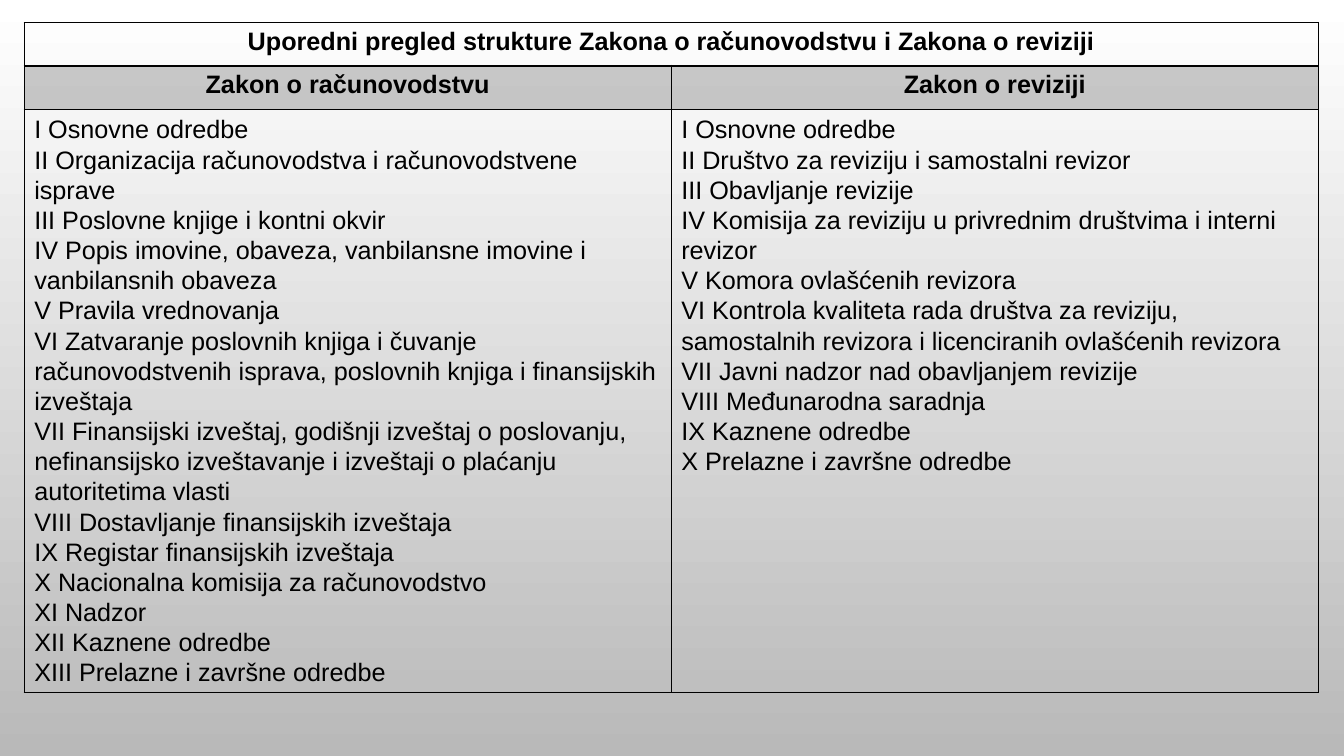
from lxml import etree
from pptx import Presentation
from pptx.dml.color import RGBColor
from pptx.enum.text import PP_ALIGN
from pptx.oxml.ns import qn
from pptx.util import Pt

CENTER, LEFT = PP_ALIGN.CENTER, PP_ALIGN.LEFT

THEME = {
    "font": "Arial",
    "size": Pt(18),
    "ink": RGBColor(0, 0, 0),
    "top": RGBColor(0xFF, 0xFF, 0xFF),
    "base": RGBColor(0xB9, 0xB9, 0xB9),
    "shade": 20,  # header opacity in percent
    "space": 1.07,
}

TITLE = "Uporedni pregled strukture Zakona o računovodstvu i Zakona o reviziji"
LAWS = {
    "Zakon o računovodstvu": [
        "I Osnovne odredbe",
        "II Organizacija računovodstva i računovodstvene isprave",
        "III Poslovne knjige i kontni okvir",
        "IV Popis imovine, obaveza, vanbilansne imovine i vanbilansnih obaveza",
        "V Pravila vrednovanja",
        "VI Zatvaranje poslovnih knjiga i čuvanje računovodstvenih isprava, "
        "poslovnih knjiga i finansijskih izveštaja",
        "VII Finansijski izveštaj, godišnji izveštaj o poslovanju, nefinansijsko "
        "izveštavanje i izveštaji o plaćanju autoritetima vlasti",
        "VIII Dostavljanje finansijskih izveštaja",
        "IX Registar finansijskih izveštaja",
        "X Nacionalna komisija za računovodstvo",
        "XI Nadzor",
        "XII Kaznene odredbe",
        "XIII Prelazne i završne odredbe",
    ],
    "Zakon o reviziji": [
        "I Osnovne odredbe",
        "II Društvo za reviziju i samostalni revizor",
        "III Obavljanje revizije",
        "IV Komisija za reviziju u privrednim društvima i interni revizor",
        "V Komora ovlašćenih revizora",
        "VI Kontrola kvaliteta rada društva za reviziju, samostalnih revizora "
        "i licenciranih ovlašćenih revizora",
        "VII Javni nadzor nad obavljanjem revizije",
        "VIII Međunarodna saradnja",
        "IX Kaznene odredbe",
        "X Prelazne i završne odredbe",
    ],
}


def write(cell, lines, head):
    """Fill a cell with one paragraph per line."""
    frame = cell.text_frame
    frame.text = "\n".join(lines)
    for para in frame.paragraphs:
        para.alignment = CENTER if head else LEFT
        if not head:
            para.line_spacing = THEME["space"]
        font = para.font
        font.name, font.size, font.bold = THEME["font"], THEME["size"], head
        font.color.rgb = THEME["ink"]


def frame_cell(cell, widths):
    """Draw cell borders; widths maps each side to points."""
    props = cell._tc.get_or_add_tcPr()
    for spot, (side, width) in enumerate(widths.items()):
        line = etree.Element(qn(f"a:ln{side}"), w=str(Pt(width)))
        fill = etree.SubElement(line, qn("a:solidFill"))
        etree.SubElement(fill, qn("a:srgbClr"), val=str(THEME["ink"]))
        props.insert(spot, line)


# Slide and background
deck = Presentation()
deck.slide_width, deck.slide_height = Pt(960), Pt(540)
slide = deck.slides.add_slide(deck.slide_layouts[6])
back = slide.background.fill
back.gradient()
back.gradient_angle = 270
for stop, tone in zip(back.gradient_stops, ("top", "base")):
    stop.color.rgb = THEME[tone]

# Table grid
rows = (31, 31, 415.5)
table = slide.shapes.add_table(
    3, 2, Pt(17.3), Pt(16), Pt(924.4), Pt(sum(rows))).table
table.first_row = table.horz_banding = False
for row, height in zip(table.rows, rows):
    row.height = Pt(height)
for col in table.columns:
    col.width = Pt(462.2)

# Title, headers and contents
table.cell(0, 0).merge(table.cell(0, 1))
write(table.cell(0, 0), [TITLE], True)
for num, (law, parts) in enumerate(LAWS.items()):
    write(table.cell(1, num), [law], True)
    write(table.cell(2, num), parts, False)

# Fills and borders
for num, row in enumerate(table.rows):
    for cell in row.cells:
        if num == 1:
            cell.fill.solid()
            cell.fill.fore_color.rgb = THEME["ink"]
            tint = cell._tc.tcPr.find(".//" + qn("a:srgbClr"))
            etree.SubElement(tint, qn("a:alpha"), val=str(THEME["shade"] * 1000))
        else:
            cell.fill.background()
        frame_cell(cell, {"L": 1, "R": 1, "T": 2 if num == 1 else 1,
                          "B": 2 if num == 0 else 1})

deck.save("out.pptx")
